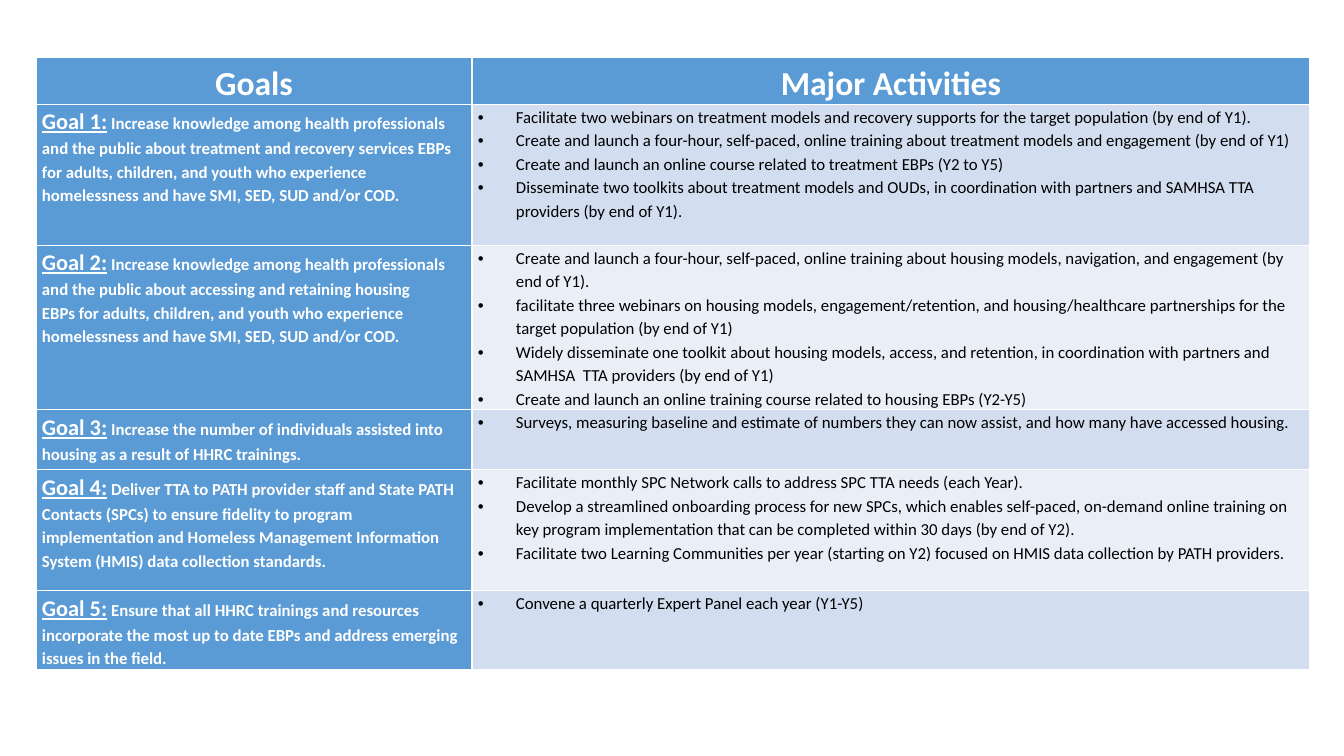
from lxml.etree import SubElement
from pptx import Presentation
from pptx.dml.color import RGBColor
from pptx.enum.text import PP_ALIGN as Align
from pptx.oxml.ns import qn
from pptx.util import Emu, Pt

WHITE = RGBColor(0xFF, 0xFF, 0xFF)
BLACK = RGBColor(0x00, 0x00, 0x00)
BLUE = RGBColor(0x5B, 0x9B, 0xD5)
BANDS = [RGBColor(0xD2, 0xDE, 0xEF), RGBColor(0xEA, 0xEF, 0xF7)]

HEADINGS = ["Goals", "Major Activities"]
GOALS = [
    (
        ["Increase knowledge among health professionals and the public about treatment and recovery services EBPs for adults, children, and youth who experience homelessness and have SMI, SED, SUD and/or COD."],
        [
            "Facilitate two webinars on treatment models and recovery supports for the target population (by end of Y1).",
            "Create and launch a four-hour, self-paced, online training about treatment models and engagement (by end of Y1)",
            "Create and launch an online course related to treatment EBPs (Y2 to Y5)",
            "Disseminate two toolkits about treatment models and OUDs, in coordination with partners and SAMHSA TTA providers (by end of Y1).",
        ],
    ),
    (
        [
            "Increase knowledge among health professionals and the public about accessing and retaining housing",
            "EBPs for adults, children, and youth who experience homelessness and have SMI, SED, SUD and/or COD.",
        ],
        [
            "Create and launch a four-hour, self-paced, online training about housing models, navigation, and engagement (by end of Y1).",
            "facilitate three webinars on housing models, engagement/retention, and housing/healthcare partnerships for the target population (by end of Y1)",
            "Widely disseminate one toolkit about housing models, access, and retention, in coordination with partners and SAMHSA  TTA providers (by end of Y1)",
            "Create and launch an online training course related to housing EBPs (Y2-Y5)",
        ],
    ),
    (
        ["Increase the number of individuals assisted into housing as a result of HHRC trainings."],
        ["Surveys, measuring baseline and estimate of numbers they can now assist, and how many have accessed housing."],
    ),
    (
        ["Deliver TTA to PATH provider staff and State PATH Contacts (SPCs) to ensure fidelity to program implementation and Homeless Management Information System (HMIS) data collection standards."],
        [
            "Facilitate monthly SPC Network calls to address SPC TTA needs (each Year).",
            "Develop a streamlined onboarding process for new SPCs, which enables self-paced, on-demand online training on key program implementation that can be completed within 30 days (by end of Y2).",
            "Facilitate two Learning Communities per year (starting on Y2) focused on HMIS data collection by PATH providers.",
        ],
    ),
    (
        ["Ensure that all HHRC trainings and resources incorporate the most up to date EBPs and address emerging issues in the field."],
        ["Convene a quarterly Expert Panel each year (Y1-Y5)"],
    ),
]

SLIDE_WIDTH, SLIDE_HEIGHT = 1344, 756
TABLE_LEFT, TABLE_TOP = 36, 57
COLUMN_WIDTHS = [436, 838]
ROW_HEIGHTS = [45, 141, 141, 60, 121, 60]
SIDE_MARGIN = 6
BULLET_INDENT = 38

HEADING = {"size": Pt(24), "bold": True}
GOAL_LABEL = {"size": Pt(16), "bold": True, "underline": True}
GOAL_TEXT = {"size": Pt(12), "bold": True, "underline": False}
ACTIVITY = {"size": Pt(12), "bold": False}


def px(length):
    return Emu(round(length * 914400 / 100.8))


def prepare_cell(cell, color):
    margins = {
        "margin_left": px(SIDE_MARGIN),
        "margin_right": px(SIDE_MARGIN),
        "margin_top": 0,
        "margin_bottom": 0,
    }
    for name, value in margins.items():
        setattr(cell, name, value)
    cell.fill.solid()
    cell.fill.fore_color.rgb = color


def next_paragraph(cell, index):
    frame = cell.text_frame
    paragraph = frame.add_paragraph() if index else frame.paragraphs[0]
    paragraph.line_spacing = 1.15
    return paragraph


def add_run(paragraph, text, formats, color):
    run = paragraph.add_run()
    run.text = text
    run.font.name = "Calibri"
    run.font.color.rgb = color
    for name, value in formats.items():
        setattr(run.font, name, value)


def add_bullet(paragraph):
    properties = paragraph._p.get_or_add_pPr()
    properties.set("marL", str(px(BULLET_INDENT)))
    properties.set("indent", str(-px(BULLET_INDENT)))
    SubElement(properties, qn("a:buFont")).set("typeface", "Arial")
    SubElement(properties, qn("a:buChar")).set("char", "•")


def fill_heading(cell, text):
    prepare_cell(cell, BLUE)
    paragraph = next_paragraph(cell, 0)
    paragraph.alignment = Align.CENTER
    add_run(paragraph, text, HEADING, WHITE)


def fill_goal(cell, number, texts):
    prepare_cell(cell, BLUE)
    for index, text in enumerate(texts):
        paragraph = next_paragraph(cell, index)
        if index == 0:
            add_run(paragraph, f"Goal {number}:", GOAL_LABEL, WHITE)
            text = f" {text}"
        add_run(paragraph, text, GOAL_TEXT, WHITE)


def fill_activities(cell, number, texts):
    prepare_cell(cell, BANDS[(number - 1) % 2])
    for index, text in enumerate(texts):
        paragraph = next_paragraph(cell, index)
        add_bullet(paragraph)
        add_run(paragraph, text, ACTIVITY, BLACK)


def main():
    presentation = Presentation()
    presentation.slide_width = px(SLIDE_WIDTH)
    presentation.slide_height = px(SLIDE_HEIGHT)
    slide = presentation.slides.add_slide(presentation.slide_layouts.get_by_name("Blank"))

    table = slide.shapes.add_table(
        len(ROW_HEIGHTS), len(COLUMN_WIDTHS), px(TABLE_LEFT), px(TABLE_TOP),
        px(sum(COLUMN_WIDTHS)), px(sum(ROW_HEIGHTS)),
    ).table
    for column, width in zip(table.columns, COLUMN_WIDTHS):
        column.width = px(width)
    for row, height in zip(table.rows, ROW_HEIGHTS):
        row.height = px(height)

    for index, heading in enumerate(HEADINGS):
        fill_heading(table.cell(0, index), heading)
    for number, (goal, activities) in enumerate(GOALS, start=1):
        fill_goal(table.cell(number, 0), number, goal)
        fill_activities(table.cell(number, 1), number, activities)

    presentation.save("out.pptx")


if __name__ == "__main__":
    main()
